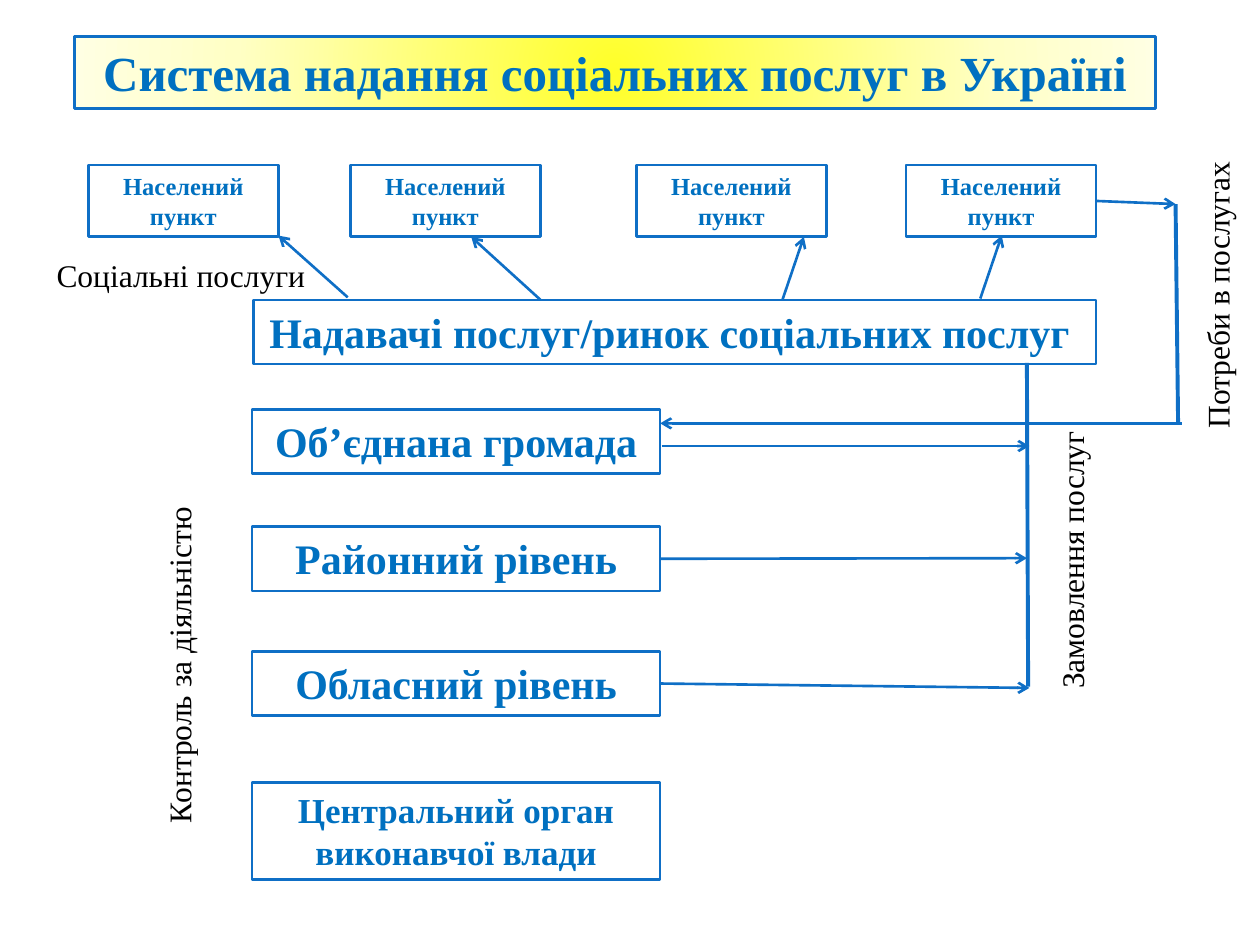
from dataclasses import dataclass

from pptx import Presentation
from pptx.dml.color import RGBColor as Rgb
from pptx.enum.shapes import MSO_CONNECTOR as Link, MSO_SHAPE as Kind
from pptx.enum.text import MSO_ANCHOR as Anchor, MSO_AUTO_SIZE as Fit, PP_ALIGN as Align
from pptx.oxml import parse_xml
from pptx.oxml.ns import nsdecls, qn
from pptx.util import Inches, Pt


@dataclass(frozen=True)
class Theme:
    font: str = "Times New Roman"
    edge: str = "0F6FC6"
    head: str = "0070C0"
    ink: str = "000000"
    glow: tuple = ((0, "FFFF29"), (70, "FFFFC5"), (100, "FFFFE3"))
    title: int = 28
    large: int = 24
    mid: int = 20
    note: int = 18
    small: int = 14
    thin: float = 1.5
    thick: float = 2.25


THEME = Theme()
RIGHT = 3  # connection site on a rectangle's right side


def apply(target, values):
    for name, value in values.items():
        setattr(target, name, value)


def write(shape, text, size, color, bold=False, align=Align.LEFT, wrap=True):
    frame = shape.text_frame
    apply(frame, {"word_wrap": wrap, "auto_size": Fit.SHAPE_TO_FIT_TEXT,
                  "vertical_anchor": Anchor.TOP})
    para = frame.paragraphs[0]
    para.alignment = align
    run = para.add_run()
    run.text = text
    apply(run.font, {"name": THEME.font, "size": Pt(size), "bold": bold})
    run.font.color.rgb = Rgb.from_string(color)


def stroke(line, width):
    line.color.rgb = Rgb.from_string(THEME.edge)
    line.width = Pt(width)


def add_box(slide, text, place, size):
    box = slide.shapes.add_shape(Kind.RECTANGLE, *map(Inches, place))
    box.shadow.inherit = False
    box.fill.background()
    stroke(box.line, THEME.thin)
    write(box, text, size, THEME.head, bold=True, align=Align.CENTER)
    return box


def add_glow(box):
    """Fill a box with a gradient that spreads from its centre."""
    stops = "".join(f'<a:gs pos="{pos * 1000}"><a:srgbClr val="{color}"/></a:gs>'
                    for pos, color in THEME.glow)
    box.fill.gradient()
    props = box._element.spPr
    props.replace(props.find(qn("a:gradFill")), parse_xml(
        f'<a:gradFill {nsdecls("a")} rotWithShape="1"><a:gsLst>{stops}</a:gsLst>'
        '<a:path path="circle"><a:fillToRect l="50000" t="50000" r="50000" b="50000"/>'
        '</a:path></a:gradFill>'))


def add_note(slide, text, place, turn=0, wrap=True):
    note = slide.shapes.add_textbox(*map(Inches, place))
    note.rotation = turn
    write(note, text, THEME.note, THEME.ink, wrap=wrap)


def add_line(slide, start, end, width=THEME.thin, arrow=True, source=None):
    line = slide.shapes.add_connector(Link.STRAIGHT, *map(Inches, start + end))
    if source is not None:
        line.begin_connect(source, RIGHT)
    stroke(line.line, width)
    if arrow:
        line.line._get_or_add_ln().append(
            parse_xml(f'<a:tailEnd {nsdecls("a")} type="arrow"/>'))
    line._element.spPr.append(parse_xml(f'<a:effectLst {nsdecls("a")}/>'))


def main():
    deck = Presentation()
    deck.slide_width, deck.slide_height = Inches(10), Inches(7.5)
    slide = deck.slides.add_slide(deck.slide_layouts[6])

    # Title
    add_glow(add_box(slide, "Система надання соціальних послуг в Україні",
                     (0.59, 0.29, 8.58, 0.57), THEME.title))

    # Settlements and providers
    towns = [add_box(slide, "Населений пункт", (left, 1.31, 1.51, 0.57), THEME.small)
             for left in (0.7, 2.78, 5.05, 7.19)]
    add_box(slide, "Надавачі послуг/ринок соціальних послуг ",
            (2.01, 2.38, 6.69, 0.51), THEME.large)

    # Levels of government
    levels = (
        ("Об’єднана громада", 3.25, 0.51, THEME.large),
        ("Районний рівень", 4.18, 0.51, THEME.large),
        ("Обласний рівень", 5.17, 0.51, THEME.large),
        ("Центральний орган виконавчої влади", 6.21, 0.77, THEME.mid),
    )
    _, county, region, _ = [add_box(slide, text, (2, top, 3.24, height), size)
                            for text, top, height, size in levels]

    # Services from providers to settlements
    for start, end in (((2.76, 2.36), (2.21, 1.87)), ((4.29, 2.38), (3.74, 1.88)),
                       ((6.21, 2.38), (6.38, 1.88)), ((7.78, 2.37), (7.95, 1.87))):
        add_line(slide, start, end)

    # Needs from settlements to the community
    add_line(slide, (8.7, 1.59), (9.33, 1.62), source=towns[-1])
    add_line(slide, (9.33, 1.62), (9.35, 3.36), THEME.thick, arrow=False)
    add_line(slide, (9.38, 3.36), (5.24, 3.36))

    # Orders from the levels to the providers
    add_line(slide, (8.15, 2.88), (8.16, 5.45), THEME.thick, arrow=False)
    add_line(slide, (5.25, 3.54), (8.17, 3.54))
    add_line(slide, (5.24, 4.43), (8.15, 4.43), source=county)
    add_line(slide, (5.24, 5.45), (8.17, 5.46), source=region)

    # Captions
    add_note(slide, "Соціальні послуги", (0.35, 1.98, 2.55, 0.4))
    add_note(slide, "Контроль за діяльністю", (0.02, 5.03, 2.8, 0.4), 270)
    add_note(slide, "Замовлення послуг", (7.37, 4.23, 2.27, 0.4), 270, wrap=False)
    add_note(slide, "Потреби в послугах", (8.49, 2.13, 2.34, 0.4), 270, wrap=False)

    deck.save("out.pptx")


if __name__ == "__main__":
    main()
